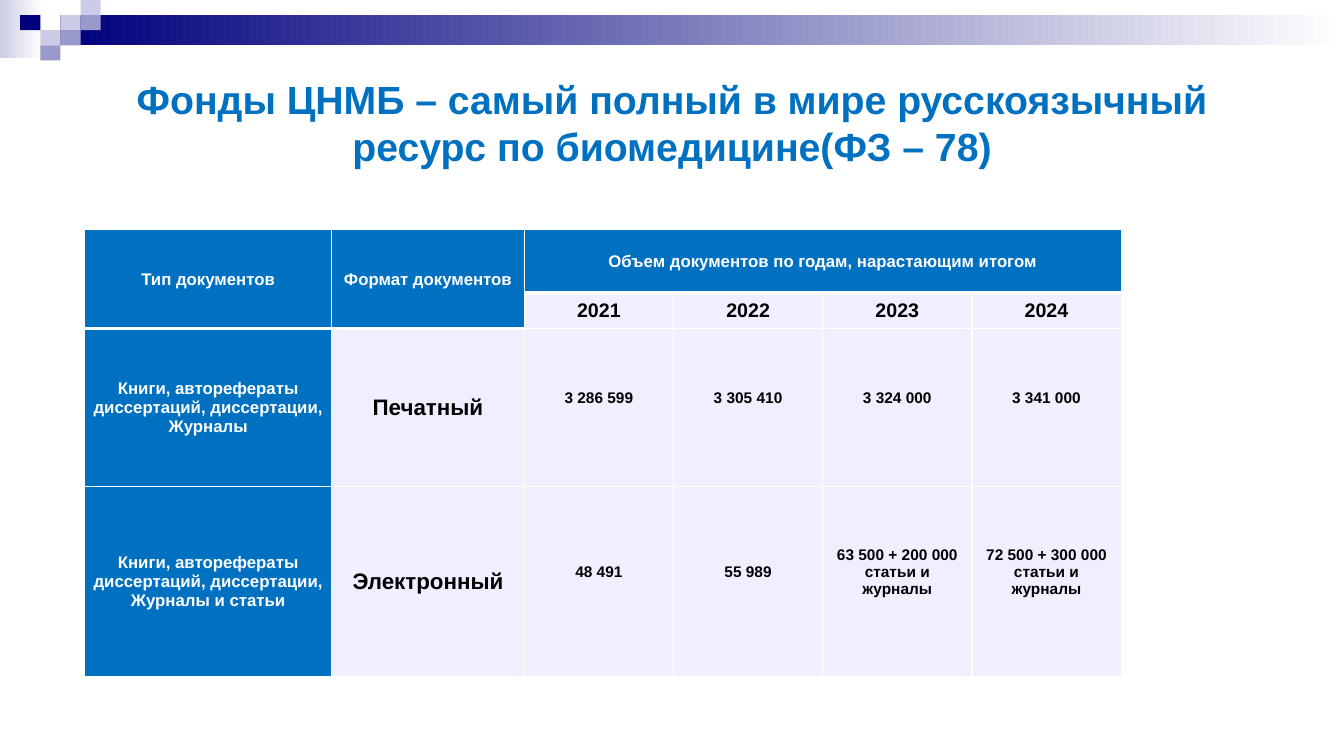
from dataclasses import dataclass

from lxml import etree
from pptx import Presentation
from pptx import util as u
from pptx.dml.color import RGBColor
from pptx.enum import shapes, text
from pptx.oxml import ns


@dataclass(frozen=True)
class Theme:
    font: str = "Arial"
    blue: str = "0070C0"
    pale: str = "EFEFFF"
    white: str = "FFFFFF"
    black: str = "000000"
    navy: str = "00007D"
    lilac: str = "CCCCE6"
    violet: str = "9999CC"
    title: int = 28
    format: int = 16
    year: int = 14
    head: int = 12
    value: int = 11
    thin: int = 1
    thick: int = 3


THEME = Theme()
WIDTH, HEIGHT = 13.33, 7.5
TILE_W, TILE_H = 0.2, 0.15
TILES = [
    (3, 1, THEME.lilac), (4, 0, THEME.lilac), (4, 1, THEME.violet),
    (2, 2, THEME.lilac), (1, 1, THEME.navy), (3, 2, THEME.violet),
    (2, 3, THEME.violet),
]
COLUMNS = [2.45, 1.91] + [1.48] * 4
ROWS = [0.63, 0.35, 1.57, 1.88]
LABEL_COLUMNS = 2
VALUE_LIFT = 0.18
HOLDINGS = [
    ["Тип документов", "Формат документов",
     "Объем документов по годам, нарастающим итогом", "", "", ""],
    ["", "", "2021", "2022", "2023", "2024"],
    ["Книги, авторефераты диссертаций, диссертации,\nЖурналы", "Печатный",
     "3 286 599", "3 305 410", "3 324 000", "3 341 000"],
    ["Книги, авторефераты диссертаций, диссертации, Журналы и статьи",
     "Электронный", "48 491", "55 989",
     "63 500 + 200 000 статьи и журналы", "72 500 + 300 000 статьи и журналы"],
]


def format_text(frame, size, color):
    for para in frame.paragraphs:
        para.alignment = text.PP_ALIGN.CENTER
        for span in para.runs:
            span.font.name = THEME.font
            span.font.size = u.Pt(size)
            span.font.bold = True
            span.font.color.rgb = RGBColor.from_string(color)


def add_block(page, left, top, width, height, *colors):
    block = page.shapes.add_shape(
        shapes.MSO_SHAPE.RECTANGLE,
        *(u.Inches(length) for length in (left, top, width, height)))
    block.shadow.inherit = False
    block.line.fill.background()
    if len(colors) == 1:
        block.fill.solid()
        block.fill.fore_color.rgb = RGBColor.from_string(colors[0])
    else:
        block.fill.gradient()
        block.fill.gradient_angle = 0
        for stop, color in zip(block.fill.gradient_stops, colors):
            stop.color.rgb = RGBColor.from_string(color)


def add_banner(page):
    add_block(page, 0, 0, 0.42, 0.58, THEME.lilac, THEME.white)
    start = 3 * TILE_W
    add_block(page, start, TILE_H, WIDTH - start, 2 * TILE_H,
              THEME.navy, THEME.white)
    for column, row, color in TILES:
        add_block(page, column * TILE_W, row * TILE_H, TILE_W, TILE_H, color)


def set_title(page, wording):
    title = page.shapes.title
    title.left, title.top = u.Inches(WIDTH * 0.05), u.Inches(0.59)
    title.width, title.height = u.Inches(WIDTH * 0.9), u.Inches(1.25)
    title.text_frame.text = wording
    title.text_frame.vertical_anchor = text.MSO_ANCHOR.MIDDLE
    format_text(title.text_frame, THEME.title, THEME.blue)


def is_header(row, column):
    return row == 0 or (row == 1 and column < LABEL_COLUMNS)


def set_borders(cell, top, bottom):
    properties = cell._tc.get_or_add_tcPr()
    widths = {"a:lnL": THEME.thin, "a:lnR": THEME.thin,
              "a:lnT": top, "a:lnB": bottom}
    for tag, width in widths.items():
        line = etree.SubElement(properties, ns.qn(tag), w=str(u.Pt(width)))
        fill = etree.SubElement(line, ns.qn("a:solidFill"))
        etree.SubElement(fill, ns.qn("a:srgbClr"), val=THEME.white)


def cell_style(row, column):
    if column == 0 or is_header(row, column):
        return THEME.blue, THEME.white, THEME.head
    if row == 1:
        return THEME.pale, THEME.black, THEME.year
    if column < LABEL_COLUMNS:
        return THEME.pale, THEME.black, THEME.format
    return THEME.pale, THEME.black, THEME.value


def fill_cell(cell, row, column):
    header = is_header(row, column)
    below_header = not header and is_header(row - 1, column)
    set_borders(cell, THEME.thick if below_header else THEME.thin,
                THEME.thick if header else THEME.thin)
    background, color, size = cell_style(row, column)
    cell.fill.solid()
    cell.fill.fore_color.rgb = RGBColor.from_string(background)
    cell.vertical_anchor = text.MSO_ANCHOR.MIDDLE
    cell.margin_left = cell.margin_right = u.Inches(0.07)
    cell.margin_top = 0
    lifted = size == THEME.value
    cell.margin_bottom = u.Inches(VALUE_LIFT if lifted else 0)
    wording = HOLDINGS[row][column]
    if wording:
        cell.text_frame.text = wording
        format_text(cell.text_frame, size, color)


def add_holdings(page):
    table = page.shapes.add_table(
        len(ROWS), len(COLUMNS), u.Inches(0.84), u.Inches(2.28),
        u.Inches(sum(COLUMNS)), u.Inches(sum(ROWS))).table
    for column, width in zip(table.columns, COLUMNS):
        column.width = u.Inches(width)
    for row, height in zip(table.rows, ROWS):
        row.height = u.Inches(height)
    for row in range(len(ROWS)):
        for column in range(len(COLUMNS)):
            fill_cell(table.cell(row, column), row, column)
    for column in range(LABEL_COLUMNS):
        table.cell(0, column).merge(table.cell(1, column))
    table.cell(0, LABEL_COLUMNS).merge(table.cell(0, len(COLUMNS) - 1))


def main():
    deck = Presentation()
    deck.slide_width, deck.slide_height = u.Inches(WIDTH), u.Inches(HEIGHT)
    page = deck.slides.add_slide(deck.slide_layouts.get_by_name("Title Only"))
    add_banner(page)
    set_title(page, "Фонды ЦНМБ – самый полный в мире русскоязычный "
                    "ресурс по биомедицине(ФЗ – 78)")
    add_holdings(page)
    deck.save("out.pptx")


if __name__ == "__main__":
    main()
